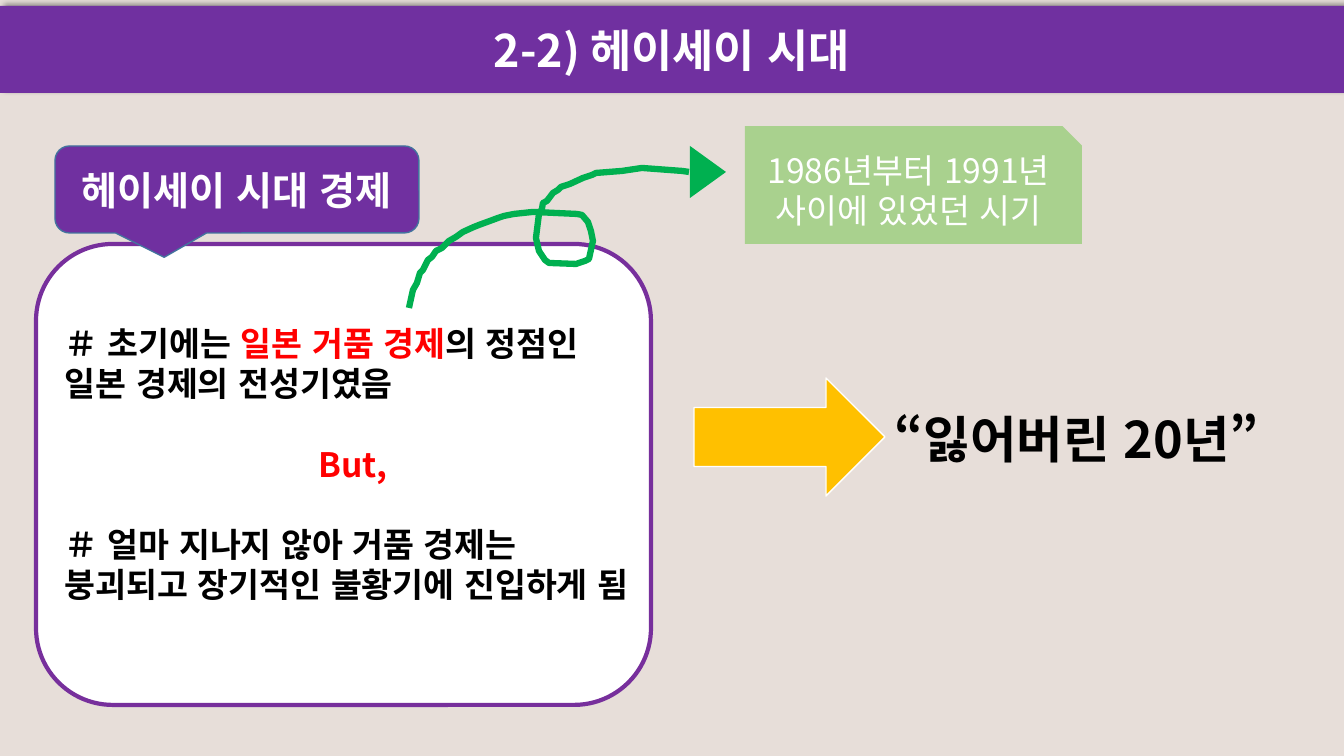
"""Build the Heisei era economy slide."""
from lxml import etree
from pptx import Presentation
from pptx import util as u
from pptx.dml.color import RGBColor
from pptx.enum import lang, shapes, text
from pptx.oxml import ns

EMU_PER_PX = 914400 / 100.8
FONT = "Noto Sans CJK KR"
COLORS = {
    "background": "E7DED9", "purple": "7030A0", "border": "772F9C",
    "callout_line": "43739E", "white": "FFFFFF", "black": "000000",
    "red": "FF0000", "amber": "FFC000", "green": "00B050", "light_green": "A9D18E",
}
KIND = shapes.MSO_SHAPE
LEFT, CENTER = text.PP_ALIGN.LEFT, text.PP_ALIGN.CENTER

TITLE = [(CENTER, 0, [("2-2) 헤이세이 시대", "white")])]
HEADING = [(CENTER, 0, [("헤이세이 시대 경제", "white")])]
PERIOD = [(CENTER, 0, [("1986년부터 1991년 사이에 있었던 시기", "white")])]
RESULT = [(LEFT, 0, [("“잃어버린 20년”", "black")])]
STORY = [
    (LEFT, 0, [("＃ 초기에는 ", "black"), ("일본 거품 경제", "red"),
               ("의 정점인 일본 경제의 전성기였음", "black")]),
    (CENTER, 29, [("But,", "red")]),
    (LEFT, 28, [("＃ 얼마 지나지 않아 거품 경제는 붕괴되고 장기적인 불황기에 진입하게 됨", "black")]),
]
LOOP = [
    (409, 308), (413, 290), (417, 283), (420, 273), (423, 270), (428, 260),
    (432, 257), (436, 251), (442, 248), (449, 241), (456, 237), (463, 232),
    (474, 227), (479, 225), (490, 221), (498, 218), (504, 216), (514, 214),
    (533, 212), (577, 214), (582, 215), (588, 222), (591, 231), (593, 241),
    (589, 259), (585, 261), (576, 264), (549, 263), (545, 260), (539, 251),
    (536, 238), (539, 214), (542, 209), (543, 203), (547, 201), (553, 193),
    (558, 190), (561, 187), (570, 184), (583, 178), (592, 175), (596, 173),
    (622, 171), (642, 168), (682, 171), (689, 172),
]


def px(value):
    return u.Emu(round(value * EMU_PER_PX))


def color(name):
    return RGBColor.from_string(COLORS[name])


def write(shape, content, size, bold=True):
    frame = shape.text_frame
    frame.word_wrap = True
    for index, (alignment, space, runs) in enumerate(content):
        paragraph = frame.add_paragraph() if index else frame.paragraphs[0]
        paragraph.alignment = alignment
        paragraph.space_before = u.Pt(space)
        for words, name in runs:
            run = paragraph.add_run()
            run.text = words
            run.font.size, run.font.bold, run.font.name = u.Pt(size), bold, FONT
            run.font.language_id = lang.MSO_LANGUAGE_ID.KOREAN
            run.font.color.rgb = color(name)
            east_asian = etree.SubElement(run.font._element, ns.qn("a:ea"))
            east_asian.set("typeface", FONT)


def style(shape, fill=None, line=None, width=1):
    shape.shadow.inherit = False
    if fill:
        shape.fill.solid()
        shape.fill.fore_color.rgb = color(fill)
    else:
        shape.fill.background()
    if line:
        shape.line.color.rgb = color(line)
        shape.line.width = u.Pt(width)
    else:
        shape.line.fill.background()


def add_block(slide, kind, box, fill, line=None, width=1):
    shape = slide.shapes.add_shape(kind, *map(px, box))
    style(shape, fill, line, width)
    shape.text_frame.vertical_anchor = text.MSO_ANCHOR.MIDDLE
    return shape


def add_text(slide, box, content, size):
    write(slide.shapes.add_textbox(*map(px, box)), content, size)


def cast_shadow(shape):
    effects = shape._element.spPr.find(ns.qn("a:effectLst"))
    shadow = etree.SubElement(effects, ns.qn("a:outerShdw"), blurRad=str(u.Pt(4)),
                              dist=str(u.Pt(3)), dir="18900000", rotWithShape="0")
    tint = etree.SubElement(shadow, ns.qn("a:srgbClr"), val=COLORS["black"])
    etree.SubElement(tint, ns.qn("a:alpha"), val="40000")


def main():
    presentation = Presentation()
    presentation.slide_width, presentation.slide_height = px(1344), px(756)
    slide = presentation.slides.add_slide(presentation.slide_layouts[6])
    slide.background.fill.solid()
    slide.background.fill.fore_color.rgb = color("background")

    title = add_block(slide, KIND.RECTANGLE, (0, 6, 1344, 87), "purple")
    cast_shadow(title)
    write(title, TITLE, 32)

    add_block(slide, KIND.ROUNDED_RECTANGLE, (36, 244, 615, 461), "white", "border", 3)
    add_text(slide, (55, 318, 596, 377), STORY, 24)

    heading = add_block(slide, KIND.ROUNDED_RECTANGULAR_CALLOUT, (55, 146, 364, 87),
                        "purple", "callout_line")
    heading.adjustments[0], heading.adjustments[1] = -0.2, 0.78
    write(heading, HEADING, 28)

    add_block(slide, KIND.RIGHT_ARROW, (694, 378, 191, 118), "amber", "white")
    add_text(slide, (885, 403, 445, 72), RESULT, 36)

    builder = slide.shapes.build_freeform(*LOOP[0], scale=EMU_PER_PX)
    builder.add_line_segments(LOOP[1:], close=False)
    style(builder.convert_to_shape(), line="green", width=4.5)
    arrowhead = add_block(slide, KIND.FLOWCHART_EXTRACT, (682, 154, 52, 36), "green")
    arrowhead.rotation = 90

    period = add_block(slide, KIND.SNIP_1_RECTANGLE, (745, 126, 337, 118), "light_green")
    write(period, PERIOD, 24, bold=False)
    presentation.save("out.pptx")


if __name__ == "__main__":
    main()
